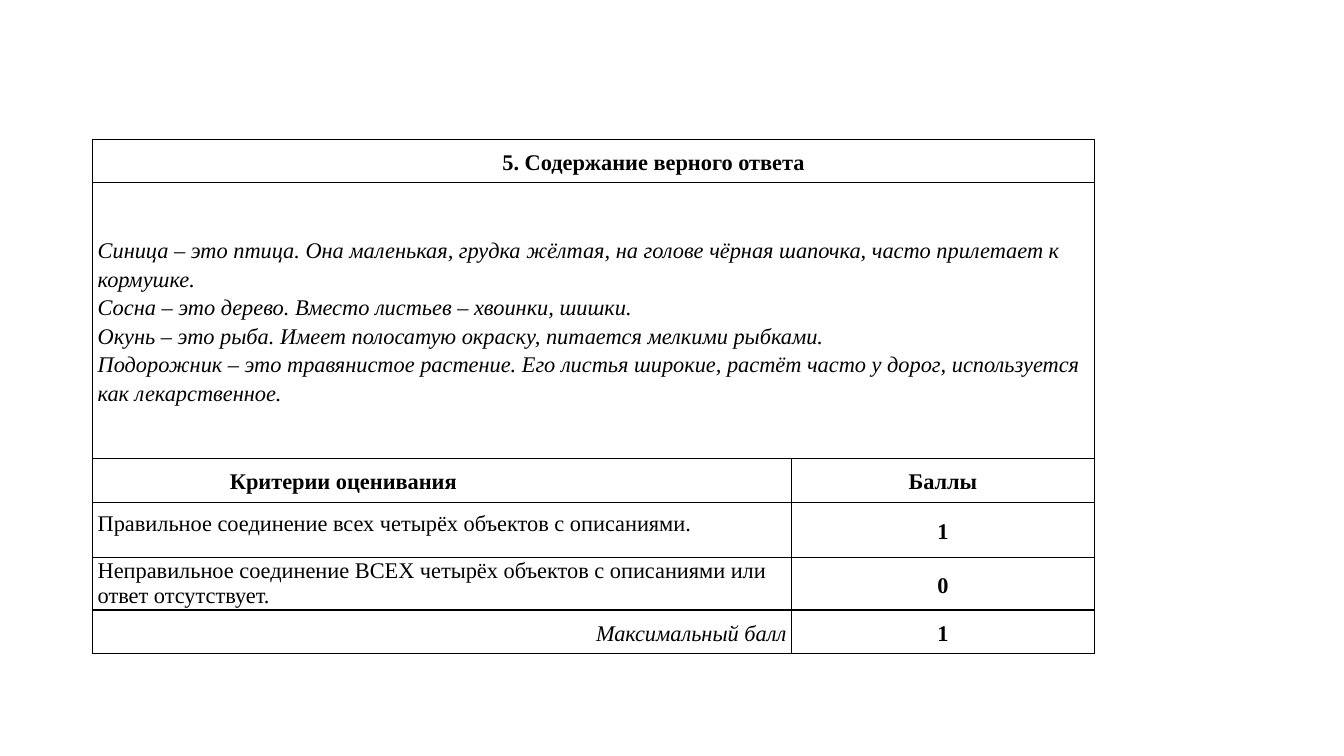
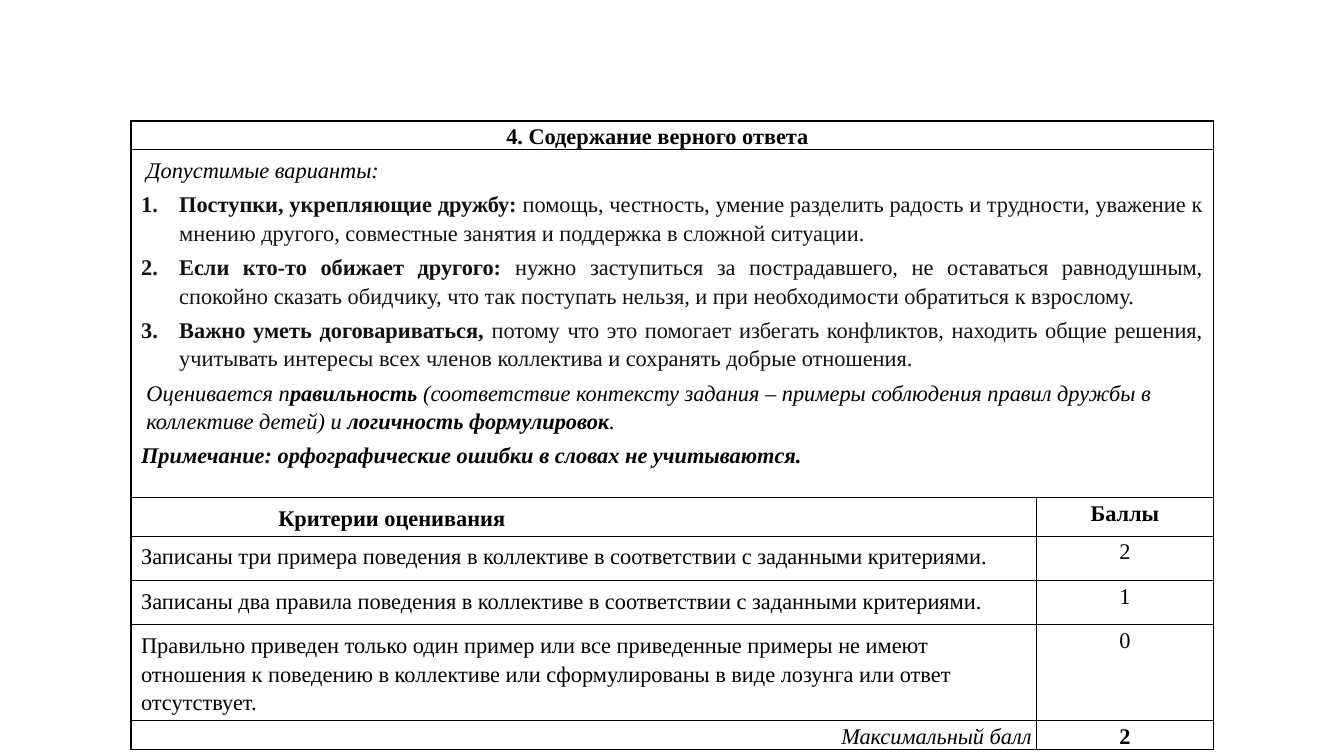
import lxml.etree
import pptx
import pptx.dml.color
import pptx.enum.text
import pptx.oxml.ns
import pptx.util
from dataclasses import dataclass

Pt = pptx.util.Pt
RGB = pptx.dml.color.RGBColor.from_string
ALIGN = pptx.enum.text.PP_ALIGN
ANCHOR = pptx.enum.text.MSO_ANCHOR
qn = pptx.oxml.ns.qn


@dataclass(frozen=True)
class Theme:
    font: str = "Times New Roman"
    size: float = 16
    line_spacing: float = 1.15
    border: float = 1
    text: str = "000000"
    point_text: str = "0F1115"
    rule: str = "000000"
    paper: str = "FFFFFF"


theme = Theme()


def add_border(cell):
    tcPr = cell._tc.get_or_add_tcPr()
    for side in ("lnL", "lnR", "lnT", "lnB"):
        ln = lxml.etree.SubElement(tcPr, qn(f"a:{side}"), w=str(Pt(theme.border)))
        fill = lxml.etree.SubElement(ln, qn("a:solidFill"))
        lxml.etree.SubElement(fill, qn("a:srgbClr"), val=theme.rule)


def add_paragraph(p, runs, align=ALIGN.LEFT, left=0, numbered=False,
                  spacing=theme.line_spacing, after=0):
    p.alignment = align
    p.line_spacing = spacing
    p.space_after = Pt(after)
    pPr = p._p.get_or_add_pPr()
    pPr.set("marL", str(Pt(left)))
    pPr.set("indent", str(Pt(-left if numbered else 0)))
    if numbered:
        lxml.etree.SubElement(pPr, qn("a:buFont"), typeface=theme.font)
        lxml.etree.SubElement(pPr, qn("a:buAutoNum"), type="arabicPeriod")
    for text, style in runs:
        r = p.add_run()
        r.text = text
        r.font.name = theme.font
        r.font.size = Pt(theme.size)
        r.font.bold = "b" in style
        r.font.italic = "i" in style
        r.font.color.rgb = RGB(theme.point_text if numbered else theme.text)


FLUSH = (0, 0, 0, 0)
TITLE = (0, 0, 21, 0)
LABEL = (0, 0, 3.5, 0)
PADDED = (7.2, 3.6, 7.2, 3.6)
CRITERION = (7.2, 3.6, 14, 3.6)
CENTER = dict(align=ALIGN.CENTER)
RIGHT = dict(align=ALIGN.RIGHT)
HEAD = dict(left=98)
NUDGED = dict(left=3.6)
POINT = dict(align=ALIGN.JUSTIFY, left=27.2, numbered=True, after=4)
NOTE = dict(left=3.8, after=4)

points_head = (FLUSH, [([("Баллы", "b")], CENTER)])
maximum = (LABEL, [([("Максимальный ", "i"), ("балл", "i")], RIGHT)])

matching = dict(
    left=66.2, top=99.4, cols=(499, 216.7), heights=(31, 197.3, 31, 39.6, 37.4, 31),
    anchor=ANCHOR.MIDDLE,
    rows=[
        [(TITLE, [([("5. Содержание верного ответа", "b")],
                   dict(align=ALIGN.CENTER, left=106.6))])],
        [(FLUSH, [([(text, "i")], NUDGED) for text in (
            "Синица – это птица. Она маленькая, грудка жёлтая, на голове чёрная шапочка, часто прилетает к кормушке.",
            "Сосна – это дерево. Вместо листьев – хвоинки, шишки.",
            "Окунь – это рыба. Имеет полосатую окраску, питается мелкими рыбками.",
            "Подорожник – это травянистое растение. Его листья широкие, растёт часто у дорог, используется как лекарственное.",
        )])],
        [(FLUSH, [([("Критерии оценивания", "b")], HEAD)]), points_head],
        [(FLUSH, [([("Правильное соединение всех четырёх объектов с описаниями.", "")],
                   dict(left=3.6, spacing=Pt(9.4)))]),
         (FLUSH, [([("1", "b")], CENTER)])],
        [(FLUSH, [([("Неправильное соединение ВСЕХ четырёх объектов с описаниями или ответ отсутствует.", "")],
                   dict(left=3.6, spacing=1.0))]),
         (FLUSH, [([("0", "b")], CENTER)])],
        [maximum, (FLUSH, [([("1", "b")], CENTER)])],
    ],
)

friendship_points = [
    ("Поступки, укрепляющие дружбу: ",
     "помощь, честность, умение разделить радость и трудности, уважение к мнению другого, совместные занятия и поддержка в сложной ситуации."),
    ("Если кто-то обижает другого: ",
     "нужно заступиться за пострадавшего, не оставаться равнодушным, спокойно сказать обидчику, что так поступать нельзя, и при необходимости обратиться к взрослому."),
    ("Важно уметь договариваться, ",
     "потому что это помогает избегать конфликтов, находить общие решения, учитывать интересы всех членов коллектива и сохранять добрые отношения."),
]
friendship_criteria = [
    ("Записаны три примера поведения в коллективе в соответствии с заданными критериями.", "2"),
    ("Записаны два правила поведения в коллективе в соответствии с заданными критериями.", "1"),
    ("Правильно приведен только один пример или все приведенные примеры не имеют отношения к поведению в коллективе или сформулированы в виде лозунга или ответ отсутствует.", "0"),
]
friendship = dict(
    left=93.6, top=86.4, cols=(646.8, 126.2),
    heights=(15.1, 248.4, 15.1, 31.7, 31.7, 64.8, 15.1),
    anchor=ANCHOR.TOP,
    rows=[
        [(TITLE, [([("4. Содержание верного ответа", "b")], CENTER)])],
        [(PADDED, [
            ([("Допустимые варианты:", "i")], NOTE),
            *[([(lead, "b"), (text, "")], POINT) for lead, text in friendship_points],
            ([("Оценивается п", "i"), ("равильность ", "bi"),
              ("(соответствие контексту задания – примеры соблюдения правил дружбы в коллективе детей) и ", "i"),
              ("логичность формулировок", "bi"), (".", "i")], NOTE),
            ([("Примечание: орфографические ошибки в словах не учитываются.", "bi")], {}),
        ])],
        [(PADDED, [([("Критерии оценивания", "b")], HEAD)]), points_head],
        *[[(CRITERION, [([(text, "")], {})]), (FLUSH, [([(score, "")], CENTER)])]
          for text, score in friendship_criteria],
        [maximum, (FLUSH, [([("2", "b")], CENTER)])],
    ],
)

prs = pptx.Presentation()
prs.slide_width = Pt(960)
prs.slide_height = Pt(540)

for rubric in (matching, friendship):
    s = prs.slides.add_slide(prs.slide_layouts[6])
    table = s.shapes.add_table(
        len(rubric["rows"]), len(rubric["cols"]), Pt(rubric["left"]), Pt(rubric["top"]),
        Pt(sum(rubric["cols"])), Pt(sum(rubric["heights"]))).table
    table.first_row = False
    table.horz_banding = False
    for column, width in zip(table.columns, rubric["cols"]):
        column.width = Pt(width)
    for row, height in zip(table.rows, rubric["heights"]):
        row.height = Pt(height)
    for cell in table.iter_cells():
        add_border(cell)
        cell.fill.solid()
        cell.fill.fore_color.rgb = RGB(theme.paper)
        cell.vertical_anchor = rubric["anchor"]
    for i, contents in enumerate(rubric["rows"]):
        if len(contents) == 1:
            table.cell(i, 0).merge(table.cell(i, 1))
        for j, (margins, paragraphs) in enumerate(contents):
            cell = table.cell(i, j)
            (cell.margin_left, cell.margin_top,
             cell.margin_right, cell.margin_bottom) = map(Pt, margins)
            tf = cell.text_frame
            for k, (runs, layout) in enumerate(paragraphs):
                p = tf.add_paragraph() if k else tf.paragraphs[0]
                add_paragraph(p, runs, **layout)

prs.save("out.pptx")
